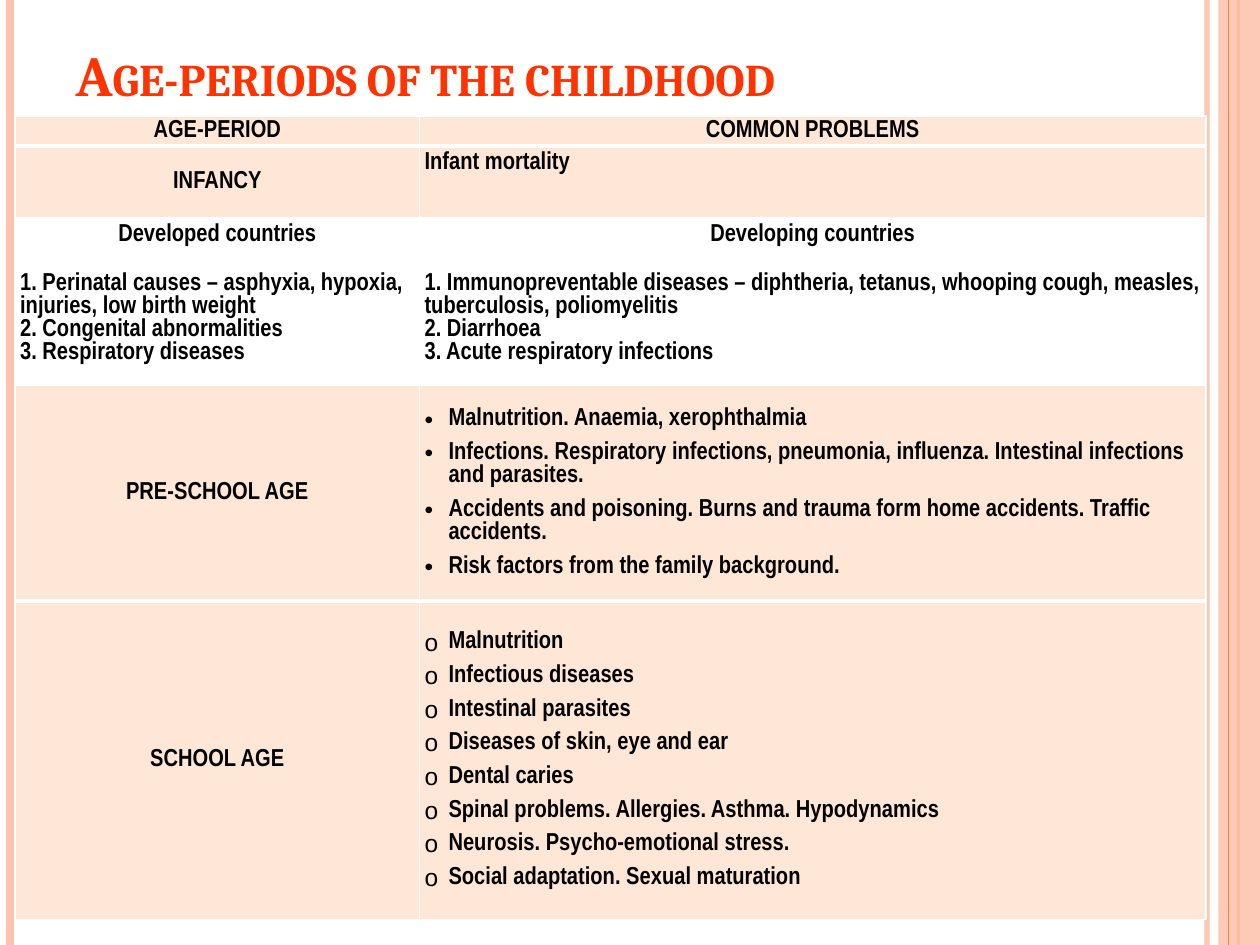
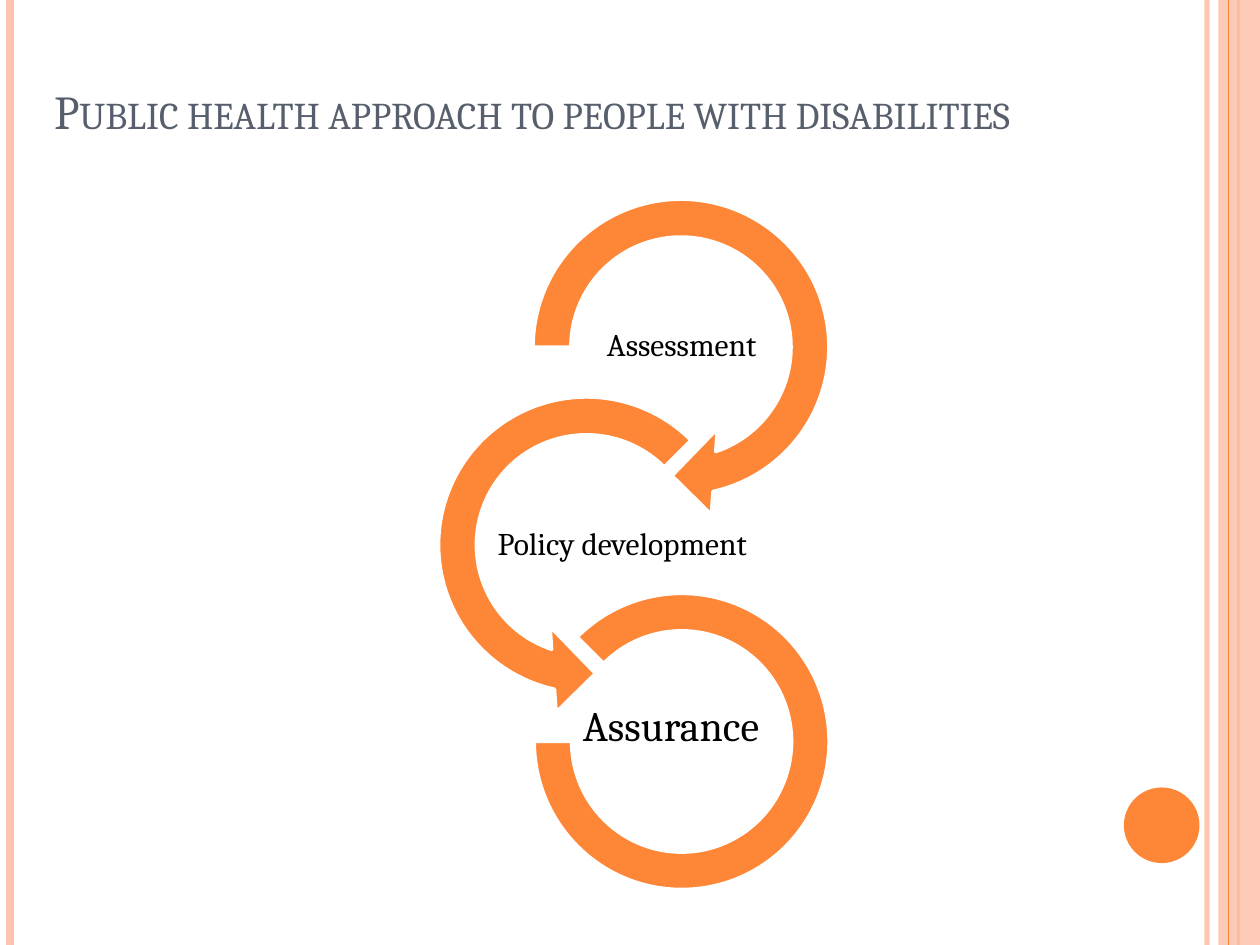
from dataclasses import dataclass

from lxml import etree
from pptx import Presentation
from pptx.dml.color import RGBColor
from pptx.enum.shapes import MSO_CONNECTOR, MSO_SHAPE
from pptx.enum.text import MSO_ANCHOR, MSO_AUTO_SIZE, PP_ALIGN
from pptx.oxml.ns import qn
from pptx.util import Inches, Pt

STRAIGHT = MSO_CONNECTOR.STRAIGHT
RECTANGLE, OVAL = MSO_SHAPE.RECTANGLE, MSO_SHAPE.OVAL
RIGHT_TURN, LEFT_TURN = MSO_SHAPE.CIRCULAR_ARROW, MSO_SHAPE.LEFT_CIRCULAR_ARROW
ARC = MSO_SHAPE.BLOCK_ARC
LEFT, CENTER = PP_ALIGN.LEFT, PP_ALIGN.CENTER
TOP, MIDDLE, BOTTOM = MSO_ANCHOR.TOP, MSO_ANCHOR.MIDDLE, MSO_ANCHOR.BOTTOM

ORANGE = RGBColor(0xFE, 0x86, 0x37)
PEACH = RGBColor(0xFE, 0xC3, 0xAE)
TINT = RGBColor(0xFF, 0xE7, 0xD7)
RED = RGBColor(0xFF, 0x33, 0x00)
SLATE = RGBColor(0x57, 0x5F, 0x6D)
WHITE = RGBColor(0xFF, 0xFF, 0xFF)
BLACK = RGBColor(0, 0, 0)

HEADING_FONT, TABLE_FONT = "Cambria", "Arial Narrow"
COLUMNS, ROWS = 100, 75  # page grid
UNIT = Inches(0.1)


@dataclass(frozen=True)
class Box:
    """Left, top, width and height in grid units."""
    left: float
    top: float
    width: float
    height: float

    def emu(self) -> list[int]:
        return [grid(n) for n in (self.left, self.top, self.width, self.height)]


@dataclass(frozen=True)
class Stripe:
    column: float
    weight: float
    color: RGBColor
    opacity: int = 100


@dataclass(frozen=True)
class Entry:
    lines: tuple[str, ...]
    align: PP_ALIGN = LEFT
    bullet: str = ""
    spacing: float = 0
    anchor: MSO_ANCHOR = MIDDLE


@dataclass(frozen=True)
class Band:
    height: float
    fill: RGBColor
    entries: tuple[Entry, Entry]


@dataclass(frozen=True)
class Stage:
    outline: MSO_SHAPE
    ring: Box
    adjustments: tuple[float, ...]
    label: str
    label_box: Box
    size: int = 18
    align: PP_ALIGN = CENTER


def label_entry(text: str, spacing: float = 3) -> Entry:
    return Entry((text,), CENTER, spacing=spacing)


# Content
EDGE_STRIPES = (Stripe(95.8, 3, PEACH, 93), Stripe(0.8, 4.5, PEACH), Stripe(98.3, 1.5, ORANGE))
INNER_STRIPE = Stripe(97.5, 0.75, ORANGE)
SIDE_BAND = Box(96.7, 0, 3.3, ROWS)
PAGE_DOT = Box(89.2, 62.5, 6, 6)

AGE_BANDS = (
    Band(2.4, TINT, (label_entry("AGE-PERIOD"), label_entry("COMMON PROBLEMS"))),
    Band(5.7, TINT, (label_entry("INFANCY"), Entry(("Infant mortality",), anchor=TOP))),
    Band(2.7, WHITE, (label_entry("Developed countries", 0),
                      label_entry("Developing countries", 0))),
    Band(10.6, WHITE, (
        Entry(("1. Perinatal causes – asphyxia, hypoxia, injuries, low birth weight",
               "2. Congenital abnormalities",
               "3. Respiratory diseases")),
        Entry(("1. Immunopreventable diseases – diphtheria, tetanus, whooping cough, "
               "measles, tuberculosis, poliomyelitis",
               "2. Diarrhoea",
               "3. Acute respiratory infections")))),
    Band(17.1, TINT, (label_entry("PRE-SCHOOL AGE"), Entry((
        "Malnutrition. Anaemia, xerophthalmia",
        "Infections. Respiratory infections, pneumonia, influenza. "
        "Intestinal infections and parasites.",
        "Accidents and poisoning. Burns and trauma form home accidents. Traffic accidents.",
        "Risk factors from the family background."), bullet="•", spacing=3))),
    Band(25.3, TINT, (label_entry("SCHOOL AGE"), Entry((
        "Malnutrition",
        "Infectious diseases",
        "Intestinal parasites",
        "Diseases of skin, eye and ear",
        "Dental caries",
        "Spinal problems. Allergies. Asthma. Hypodynamics",
        "Neurosis. Psycho-emotional stress.",
        "Social adaptation. Sexual maturation"), bullet="o", spacing=3))),
)
AGE_COLUMNS = (32.1, 62.4)
THICK_RULES = {1, 5}  # horizontal rules counted from the table's top

STAGES = (
    Stage(RIGHT_TURN, Box(40.4, 13.9, 27.3, 27.3), (0.11, 11.42, 45, 108, 0.125),
          "Assessment", Box(46.5, 23.7, 15.2, 7.6)),
    Stage(LEFT_TURN, Box(32.9, 29.6, 27.3, 27.3), (0.11, 11.42, 63, 189, 0.125),
          "Policy development", Box(39.4, 39.5, 40.7, 7.6), align=LEFT),
    Stage(ARC, Box(42.4, 47.1, 23.4, 23.5), (135, 108, 0.127),
          "Assurance", Box(33.5, 54, 39.5, 7.6), size=24),
)


# Helpers
def grid(units: float) -> int:
    return round(units * UNIT)


def set_opacity(element, percent: int) -> None:
    if percent < 100:
        color = next(element.iter(qn("a:srgbClr")))
        etree.SubElement(color, qn("a:alpha"), val=str(percent * 1000))


def add_bullet(paragraph, mark: str) -> None:
    properties = paragraph._p.get_or_add_pPr()
    indent = Inches(0.19)
    properties.set("marL", str(indent))
    properties.set("indent", str(-indent))
    etree.SubElement(properties, qn("a:buFont"), typeface="Arial")
    etree.SubElement(properties, qn("a:buChar"), char=mark)


def write_text(frame, lines: tuple[str, ...], *, font: str, size: float,
               color: RGBColor = BLACK, bold: bool = False, align: PP_ALIGN = LEFT,
               bullet: str = "", spacing: float = 0, line_spacing: float = 1.0,
               small_caps: bool = False) -> None:
    for index, line in enumerate(lines):
        paragraph = frame.paragraphs[0] if index == 0 else frame.add_paragraph()
        paragraph.alignment = align
        paragraph.line_spacing = line_spacing
        paragraph.space_before = Pt(spacing if index else 0)
        paragraph.space_after = Pt(spacing)
        if bullet:
            add_bullet(paragraph, bullet)
        run = paragraph.add_run()
        run.text = line
        run.font.name, run.font.size, run.font.bold = font, Pt(size), bold
        run.font.color.rgb = color
        if small_caps:
            run.font._element.set("cap", "small")


def add_filled(slide, outline: MSO_SHAPE, box: Box, fill: RGBColor):
    shape = slide.shapes.add_shape(outline, *box.emu())
    shape.shadow.inherit = False
    shape.fill.solid()
    shape.fill.fore_color.rgb = fill
    shape.line.fill.background()
    return shape


def add_stripe(slide, stripe: Stripe):
    x = grid(stripe.column)
    line = slide.shapes.add_connector(STRAIGHT, x, 0, x, grid(ROWS))
    line.line.color.rgb = stripe.color
    line.line.width = Pt(stripe.weight)
    set_opacity(line.element, stripe.opacity)
    etree.SubElement(line.element.spPr, qn("a:effectLst"))
    return line


def decorate_master(slide, master) -> None:
    """Draw the side stripes and the dot, then move them to the master."""
    decor = [add_stripe(slide, stripe) for stripe in EDGE_STRIPES]
    side = add_filled(slide, RECTANGLE, SIDE_BAND, PEACH)
    set_opacity(side.element, 87)
    decor += [side, add_stripe(slide, INNER_STRIPE),
              add_filled(slide, OVAL, PAGE_DOT, ORANGE)]
    for number, shape in enumerate(decor, start=100):
        shape.element.xpath(".//p:cNvPr")[0].set("id", str(number))
        master.shapes.element.append(shape.element)


def set_title(slide, text: str, box: Box, *, size: float, color: RGBColor,
              bold: bool = False) -> None:
    title = slide.shapes.title
    title.left, title.top, title.width, title.height = box.emu()
    frame = title.text_frame
    frame.auto_size = MSO_AUTO_SIZE.NONE
    frame.vertical_anchor = BOTTOM
    write_text(frame, (text,), font=HEADING_FONT, size=size, color=color, bold=bold,
               small_caps=True)


def add_borders(cell, row: int) -> None:
    properties = cell._tc.get_or_add_tcPr()
    weights = {"L": 1, "R": 1, "T": 3 if row in THICK_RULES else 1,
               "B": 3 if row + 1 in THICK_RULES else 1}
    for side, weight in weights.items():
        line = etree.SubElement(properties, qn(f"a:ln{side}"), w=str(Pt(weight)))
        fill = etree.SubElement(line, qn("a:solidFill"))
        etree.SubElement(fill, qn("a:srgbClr"), val=str(WHITE))


def fill_cell(cell, entry: Entry, fill: RGBColor, row: int) -> None:
    add_borders(cell, row)
    cell.fill.solid()
    cell.fill.fore_color.rgb = fill
    cell.margin_left = cell.margin_right = grid(0.4)
    cell.margin_top = grid(0.4) if entry.anchor == TOP else 0
    cell.margin_bottom = 0
    cell.vertical_anchor = entry.anchor
    write_text(cell.text_frame, entry.lines, font=TABLE_FONT, size=14, bold=True,
               align=entry.align, bullet=entry.bullet, spacing=entry.spacing)


def add_age_table(slide) -> None:
    box = Box(1.2, 9.2, sum(AGE_COLUMNS), sum(band.height for band in AGE_BANDS))
    table = slide.shapes.add_table(len(AGE_BANDS), len(AGE_COLUMNS), *box.emu()).table
    table.horz_banding = False
    for column, width in zip(table.columns, AGE_COLUMNS):
        column.width = grid(width)
    for row, band in enumerate(AGE_BANDS):
        table.rows[row].height = grid(band.height)
        for column, entry in enumerate(band.entries):
            fill_cell(table.cell(row, column), entry, band.fill, row)


def add_stage(slide, stage: Stage) -> None:
    ring = add_filled(slide, stage.outline, stage.ring, ORANGE)
    ring.line.color.rgb = WHITE
    ring.line.width = Pt(2)
    for index, value in enumerate(stage.adjustments):
        ring.adjustments[index] = value
    frame = slide.shapes.add_textbox(*stage.label_box.emu()).text_frame
    frame.word_wrap = True
    frame.vertical_anchor = MIDDLE
    frame.margin_left = frame.margin_right = grid(0.1)
    frame.margin_top = frame.margin_bottom = grid(0.1)
    write_text(frame, (stage.label,), font=HEADING_FONT, size=stage.size,
               align=stage.align, line_spacing=0.9)


def main() -> None:
    deck = Presentation()
    deck.slide_width, deck.slide_height = grid(COLUMNS), grid(ROWS)
    title_only = deck.slide_layouts[5]

    # Age periods
    ages = deck.slides.add_slide(title_only)
    decorate_master(ages, deck.slide_master)
    set_title(ages, "Age-periods of the childhood", Box(5, 3, 90, 6.1),
              size=32.4, color=RED, bold=True)
    add_age_table(ages)

    # Public health approach
    approach = deck.slides.add_slide(title_only)
    set_title(approach, "Public health approach to people with disabilities",
              Box(3.3, 3.2, 93.3, 8.3), size=27, color=SLATE)
    for stage in STAGES:
        add_stage(approach, stage)

    deck.save("out.pptx")


if __name__ == "__main__":
    main()
